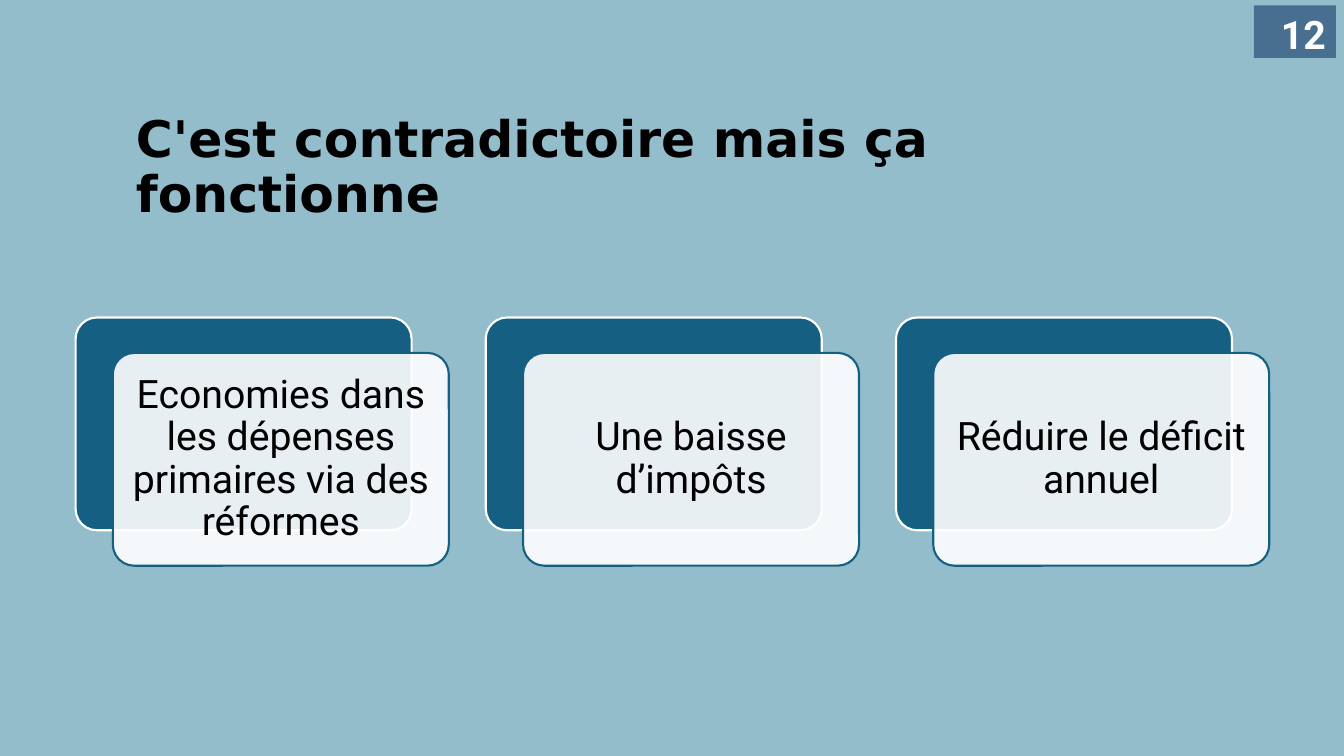
import pptx
import pptx.dml.color
import pptx.enum.shapes
import pptx.enum.text
import pptx.oxml.ns
import pptx.util
import lxml.etree

Pt = pptx.util.Pt
RGBColor = pptx.dml.color.RGBColor
ShapeType = pptx.enum.shapes.MSO_SHAPE
Align = pptx.enum.text.PP_ALIGN
Anchor = pptx.enum.text.MSO_ANCHOR

BACKGROUND = RGBColor(0x94, 0xBD, 0xCC)
TEAL = RGBColor(0x15, 0x60, 0x82)
SLATE = RGBColor(0x49, 0x6F, 0x90)
WHITE = RGBColor(0xFF, 0xFF, 0xFF)
BLACK = RGBColor(0x00, 0x00, 0x00)

CARD_TEXTS = [
    "Economies dans les dépenses primaires via des réformes",
    "Une baisse d’impôts",
    "Réduire le déficit annuel",
]
CARD_LEFT, CARD_TOP = 54, 226.8
CARD_PITCH = 293
CARD_WIDTH, CARD_HEIGHT = 240, 152
FRONT_SHIFT_X, FRONT_SHIFT_Y = 26.6, 25.3


def write_text(shape, text, font="Roboto", size=28, color=BLACK, bold=False,
               align=Align.LEFT, anchor=Anchor.TOP, line_spacing=0.9, inset=None):
    frame = shape.text_frame
    frame.word_wrap = True
    frame.vertical_anchor = anchor
    if inset is not None:
        frame.margin_left = frame.margin_right = Pt(inset)
        frame.margin_top = frame.margin_bottom = Pt(inset)
    paragraph = frame.paragraphs[0]
    paragraph.alignment = align
    paragraph.line_spacing = line_spacing
    run = paragraph.add_run()
    run.text = text
    run.font.name = font
    run.font.size = Pt(size)
    run.font.bold = bold
    run.font.color.rgb = color


def add_box(slide, kind, left, top, width, height, fill, line=None, opacity=100):
    shape = slide.shapes.add_shape(kind, Pt(left), Pt(top), Pt(width), Pt(height))
    shape.shadow.inherit = False
    shape.fill.solid()
    shape.fill.fore_color.rgb = fill
    if opacity < 100:
        color = shape.fill._xPr.find(".//" + pptx.oxml.ns.qn("a:srgbClr"))
        alpha = lxml.etree.SubElement(color, pptx.oxml.ns.qn("a:alpha"))
        alpha.set("val", str(opacity * 1000))
    if line is None:
        shape.line.fill.background()
    else:
        shape.line.color.rgb = line
        shape.line.width = Pt(1.5)
    return shape


def add_card(slide, left, text):
    back = add_box(slide, ShapeType.ROUNDED_RECTANGLE, left, CARD_TOP,
                   CARD_WIDTH, CARD_HEIGHT, TEAL, line=WHITE)
    front = add_box(slide, ShapeType.ROUNDED_RECTANGLE, left + FRONT_SHIFT_X,
                    CARD_TOP + FRONT_SHIFT_Y, CARD_WIDTH, CARD_HEIGHT, WHITE,
                    line=TEAL, opacity=90)
    for shape in (back, front):
        shape.adjustments[0] = 0.1
    write_text(front, text, align=Align.CENTER, anchor=Anchor.MIDDLE, inset=8.4)


def main():
    presentation = pptx.Presentation()
    presentation.slide_width = Pt(960)
    presentation.slide_height = Pt(540)
    slide = presentation.slides.add_slide(presentation.slide_layouts[6])
    slide.background.fill.solid()
    slide.background.fill.fore_color.rgb = BACKGROUND

    title = slide.shapes.add_textbox(Pt(90), Pt(78), Pt(780), Pt(54))
    write_text(title, "C'est contradictoire mais ça fonctionne",
               font="DejaVu Sans", size=36, bold=True)

    for index, text in enumerate(CARD_TEXTS):
        add_card(slide, CARD_LEFT + index * CARD_PITCH, text)

    page_number = add_box(slide, ShapeType.RECTANGLE, 895.7, 3.8, 58.5, 37.5, SLATE)
    write_text(page_number, "12", color=WHITE, bold=True,
               align=Align.RIGHT, line_spacing=1.0)

    presentation.save("out.pptx")


if __name__ == "__main__":
    main()
